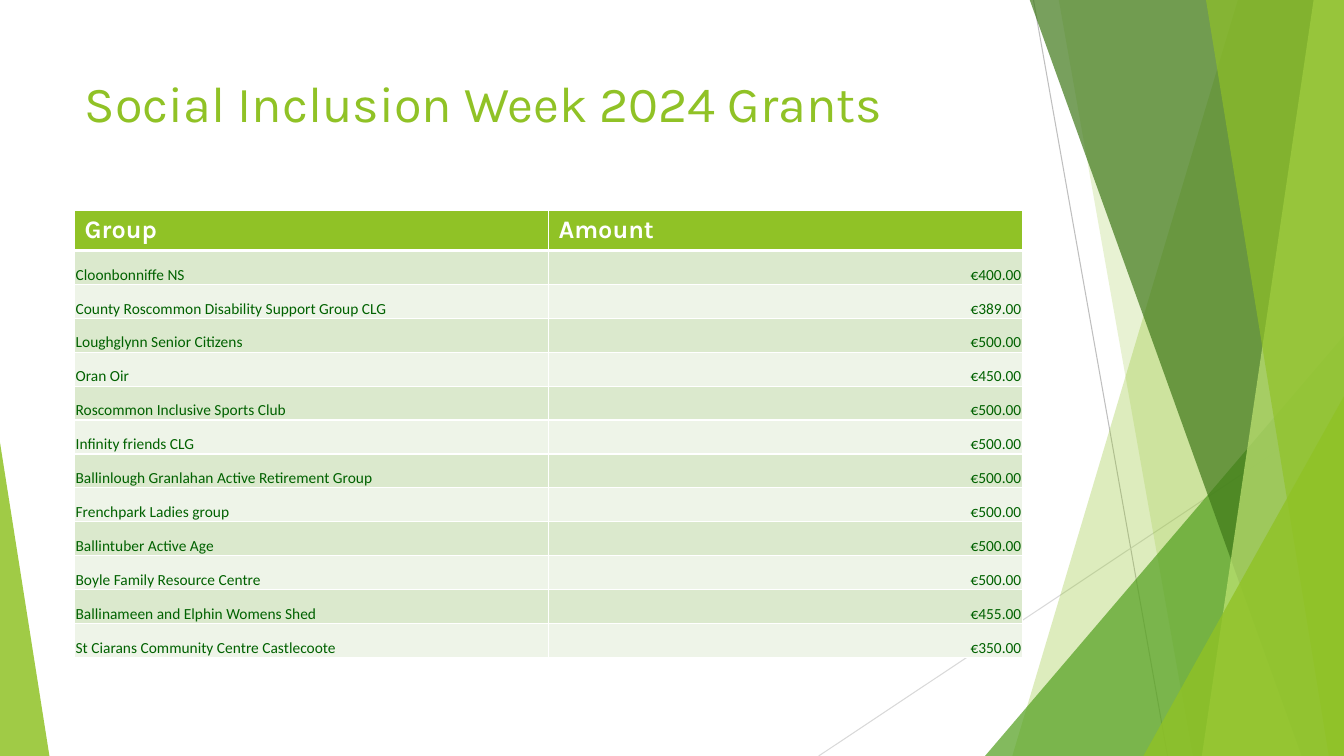
from lxml import etree
from pptx import Presentation
from pptx.dml.color import RGBColor
from pptx.enum.shapes import MSO_CONNECTOR, MSO_SHAPE
from pptx.enum.text import MSO_ANCHOR, PP_ALIGN
from pptx.oxml.ns import qn
from pptx.util import Inches, Pt

STRAIGHT = MSO_CONNECTOR.STRAIGHT
TRIANGLE = MSO_SHAPE.ISOSCELES_TRIANGLE
TOP, BOTTOM = MSO_ANCHOR.TOP, MSO_ANCHOR.BOTTOM
LEFT, RIGHT = PP_ALIGN.LEFT, PP_ALIGN.RIGHT

GREEN, WHITE, DARK_GREEN = "90C226", "FFFFFF", "006100"
BANDS = ("DBE9CD", "EEF4E8")
SLIDE_W, SLIDE_H = 13.33, 7.5
TABLE_W, TABLE_H, HEADER_H = 9.4, 4.43, 0.39

GRANTS = [
    ("Cloonbonniffe NS", "€400.00"),
    ("County Roscommon Disability Support Group CLG", "€389.00"),
    ("Loughglynn Senior Citizens", "€500.00"),
    ("Oran Oir", "€450.00"),
    ("Roscommon Inclusive Sports Club", "€500.00"),
    ("Infinity friends CLG", "€500.00"),
    ("Ballinlough Granlahan Active Retirement Group", "€500.00"),
    ("Frenchpark Ladies group", "€500.00"),
    ("Ballintuber Active Age", "€500.00"),
    ("Boyle Family Resource Centre", "€500.00"),
    ("Ballinameen and Elphin Womens Shed", "€455.00"),
    ("St Ciarans Community Centre Castlecoote", "€350.00"),
]


def rgb(color):
    return RGBColor.from_string(color)


def paint(shape, color, opacity):
    shape.shadow.inherit = False
    shape.line.fill.background()
    shape.fill.solid()
    shape.fill.fore_color.rgb = rgb(color)
    clr = shape.fill._xPr.find(qn("a:solidFill"))[0]
    etree.SubElement(clr, qn("a:alpha"), val=str(opacity * 1000))


def add_line(s, x1, y1, x2, y2, color):
    line = s.shapes.add_connector(STRAIGHT, Inches(x1), Inches(y1), Inches(x2), Inches(y2))
    line.line.color.rgb = rgb(color)
    line.line.width = Pt(0.75)
    etree.SubElement(line._element.spPr, qn("a:effectLst"))


def add_blade(s, top_x, bottom_x, color, opacity):
    top, right, bottom = Inches(-0.01), Inches(SLIDE_W), Inches(SLIDE_H)
    builder = s.shapes.build_freeform(Inches(top_x), top)
    builder.add_line_segments([(right, top), (right, bottom), (Inches(bottom_x), bottom)])
    paint(builder.convert_to_shape(), color, opacity)


def add_triangle(s, x, y, w, apex, color, opacity):
    tri = s.shapes.add_shape(TRIANGLE, Inches(x), Inches(y), Inches(w), Inches(SLIDE_H - y))
    tri.adjustments[0] = apex
    paint(tri, color, opacity)


def add_decoration(s):
    add_line(s, 10.25, 0, 11.58, 7.5, "BFBFBF")
    add_line(s, 13.33, 4.03, 8.12, 7.5, "D9D9D9")
    add_blade(s, 12.28, 10.04, GREEN, 30)
    add_blade(s, 10.5, 11.83, GREEN, 20)
    add_triangle(s, 9.77, 3.33, 3.56, 1, "54A021", 72)
    add_blade(s, 10.21, 12.91, "3F7819", 70)
    add_blade(s, 13.03, 11.92, "C0E474", 70)
    add_blade(s, 11.96, 13.18, GREEN, 65)
    add_triangle(s, 11.34, 3.93, 1.99, 1, GREEN, 80)
    add_triangle(s, 0, 4.39, 0.49, 0, GREEN, 85)


def set_font(p, name, size, color, bold=False):
    p.font.name = name
    p.font.size = Pt(size)
    p.font.bold = bold
    p.font.color.rgb = rgb(color)


def add_title(s, text):
    title = s.shapes.title
    title.left, title.top = Inches(0.74), Inches(0.67)
    title.width, title.height = Inches(9.4), Inches(1.44)
    tf = title.text_frame
    tf.text = text
    tf.word_wrap = True
    tf.vertical_anchor = TOP
    p = tf.paragraphs[0]
    p.alignment = LEFT
    set_font(p, "Karla", 36, GREEN)


def set_borders(cell, bottom_width):
    tcPr = cell._tc.get_or_add_tcPr()
    widths = {"a:lnL": 1, "a:lnR": 1, "a:lnT": 1, "a:lnB": bottom_width}
    for i, (tag, width) in enumerate(widths.items()):
        ln = etree.Element(qn(tag), w=str(Pt(width)))
        fill = etree.SubElement(ln, qn("a:solidFill"))
        etree.SubElement(fill, qn("a:srgbClr"), val=WHITE)
        tcPr.insert(i, ln)


def fill_cell(cell, text, color, bottom_width=1):
    cell.text = text
    cell.fill.solid()
    cell.fill.fore_color.rgb = rgb(color)
    set_borders(cell, bottom_width)
    return cell.text_frame.paragraphs[0]


def add_grants_table(s):
    frame = s.shapes.add_table(len(GRANTS) + 1, 2, Inches(0.74), Inches(2.09),
                               Inches(TABLE_W), Inches(TABLE_H))
    table = frame.table
    table.rows[0].height = Inches(HEADER_H)
    for col, heading in enumerate(("Group", "Amount")):
        p = fill_cell(table.cell(0, col), heading, GREEN, 3)
        set_font(p, "Karla", 18, WHITE, True)
    for row, grant in enumerate(GRANTS, 1):
        table.rows[row].height = Inches((TABLE_H - HEADER_H) / len(GRANTS))
        for col, text in enumerate(grant):
            cell = table.cell(row, col)
            p = fill_cell(cell, text, BANDS[(row - 1) % 2])
            p.alignment = (LEFT, RIGHT)[col]
            set_font(p, "Calibri", 11, DARK_GREEN)
            cell.vertical_anchor = BOTTOM
            cell.margin_left = cell.margin_right = cell.margin_top = Inches(0.01)
            cell.margin_bottom = 0


def main():
    prs = Presentation()
    prs.slide_width, prs.slide_height = Inches(SLIDE_W), Inches(SLIDE_H)
    s = prs.slides.add_slide(prs.slide_layouts[5])
    add_decoration(s)
    add_title(s, "Social Inclusion Week 2024 Grants")
    add_grants_table(s)
    prs.save("out.pptx")


if __name__ == "__main__":
    main()
